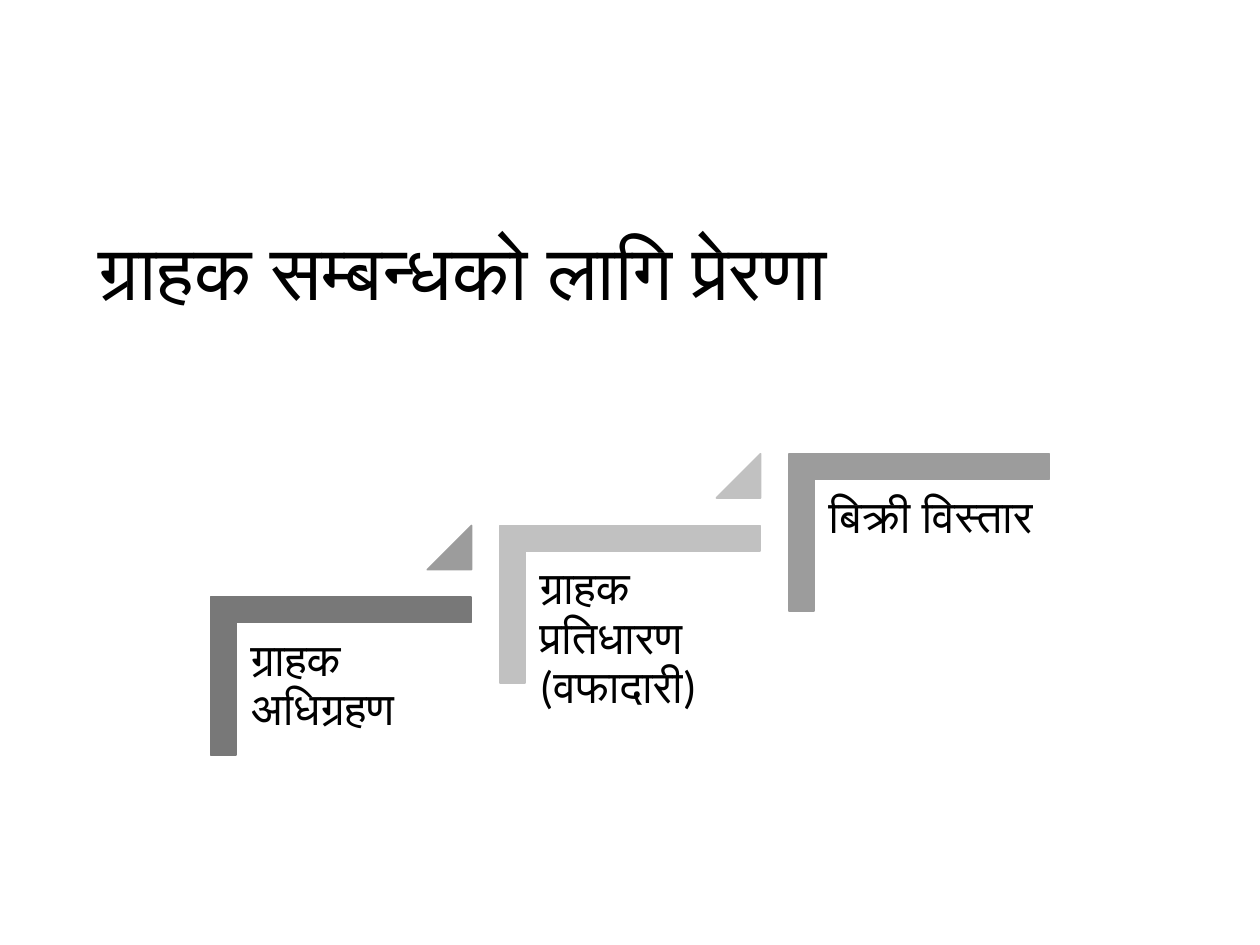
from pptx import Presentation
from pptx.dml.color import RGBColor
from pptx.enum.shapes import MSO_SHAPE
from pptx.enum.text import MSO_ANCHOR, PP_ALIGN
from pptx.util import Pt

BLACK = RGBColor(0x00, 0x00, 0x00)
DARK = RGBColor(0x78, 0x78, 0x78)
MEDIUM = RGBColor(0x9C, 0x9C, 0x9C)
LIGHT = RGBColor(0xC1, 0xC1, 0xC1)

TITLE = "ग्राहक सम्बन्धको लागि प्रेरणा"
# label, bracket colour, colour of the triangle leading to the next step
STEPS = [
    ("ग्राहक अधिग्रहण", DARK, MEDIUM),
    ("ग्राहक प्रतिधारण (वफादारी)", LIGHT, LIGHT),
    ("बिक्री विस्तार", MEDIUM, None),
]

# Left, top, width and height on the first step; later steps are shifted
BRACKET = (149.8, 311.8, 90, 149)
LABEL = (135.4, 356.4, 134.6, 118)
TRIANGLE = (244.2, 300.3, 25.2, 25.2)
STEP_RIGHT, STEP_UP = 165.2, 41


def add_text(page, text, frame, font, size, margins, anchor):
    box = page.shapes.add_textbox(*map(Pt, frame))
    text_frame = box.text_frame
    text_frame.word_wrap = True
    text_frame.vertical_anchor = anchor
    text_frame.margin_left = text_frame.margin_right = Pt(margins[0])
    text_frame.margin_top = text_frame.margin_bottom = Pt(margins[1])
    text_frame.text = text
    para = text_frame.paragraphs[0]
    para.alignment = PP_ALIGN.LEFT
    para.line_spacing = 0.9
    span = para.runs[0]
    span.font.name = font
    span.font.size = Pt(size)
    span.font.color.rgb = BLACK


def add_figure(page, preset, frame, color, adjustments):
    figure = page.shapes.add_shape(preset, *map(Pt, frame))
    figure.shadow.inherit = False
    for index, value in enumerate(adjustments):
        figure.adjustments[index] = value
    figure.fill.solid()
    figure.fill.fore_color.rgb = color
    figure.line.color.rgb = color
    figure.line.width = Pt(1)
    return figure


def shifted(frame, index):
    left, top, width, height = frame
    return left + index * STEP_RIGHT, top - index * STEP_UP, width, height


def main():
    deck = Presentation()
    deck.slide_width, deck.slide_height = Pt(720), Pt(540)
    page = deck.slides.add_slide(deck.slide_layouts[6])

    add_text(page, TITLE, (49.5, 126, 621, 62.6), "Arial", 44, (7.2, 3.6), MSO_ANCHOR.MIDDLE)
    for index, (label, color, triangle_color) in enumerate(STEPS):
        bracket = add_figure(page, MSO_SHAPE.CORNER, shifted(BRACKET, index), color, (0.16, 0.16))
        bracket.rotation = 90
        add_text(page, label, shifted(LABEL, index), "Calibri", 26, (7.8, 7.8), MSO_ANCHOR.TOP)
        if triangle_color is not None:
            add_figure(page, MSO_SHAPE.ISOSCELES_TRIANGLE, shifted(TRIANGLE, index),
                       triangle_color, (1,))

    deck.save("out.pptx")


if __name__ == "__main__":
    main()
